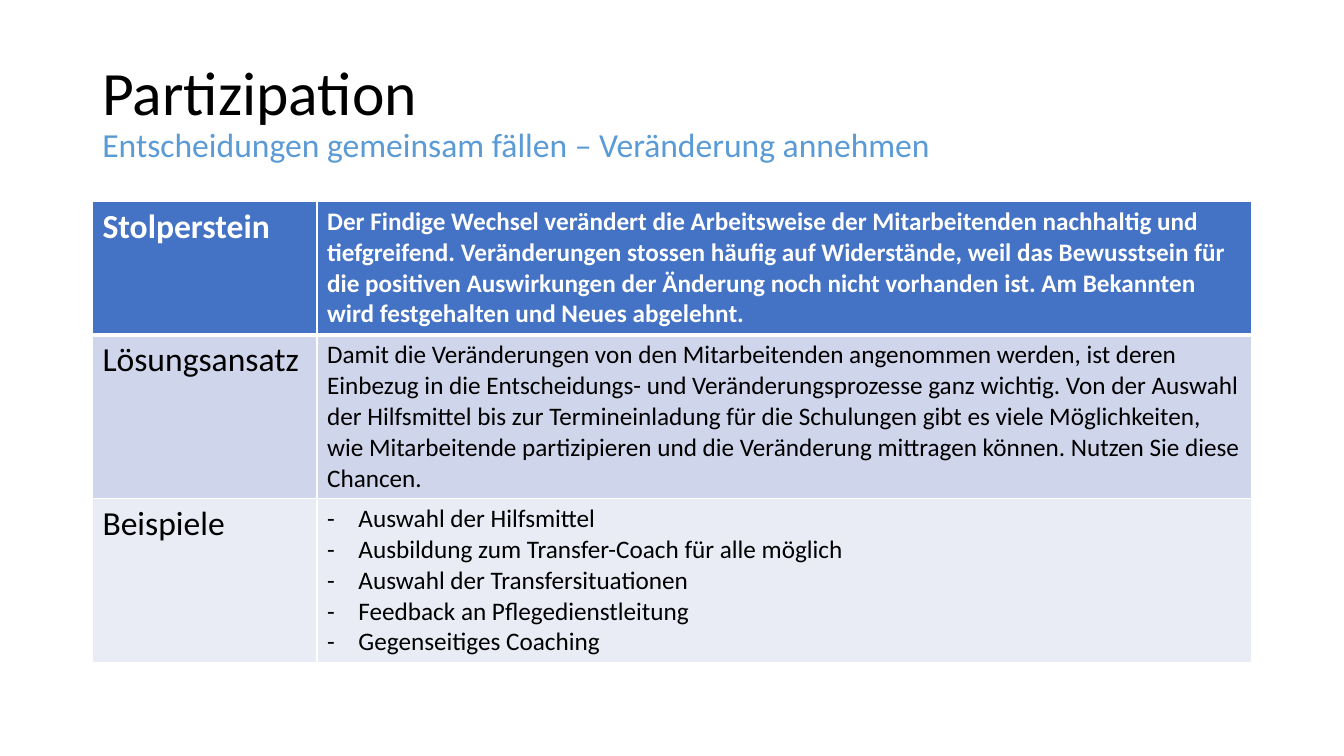
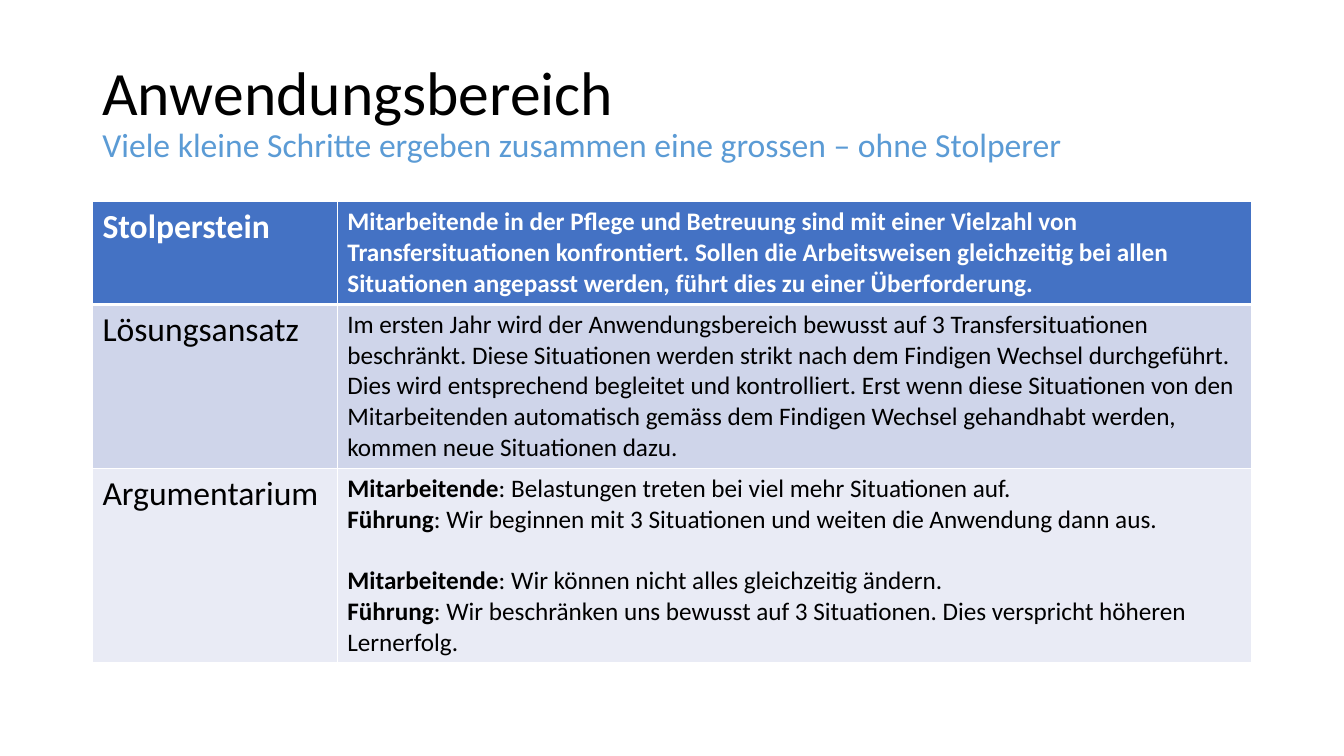
import dataclasses

import lxml.etree
import pptx
import pptx.dml.color
import pptx.enum.text
import pptx.oxml.ns
import pptx.util

Cm, Pt = pptx.util.Cm, pptx.util.Pt


@dataclasses.dataclass(frozen=True)
class Theme:
    font: str = "Calibri"
    text: str = "000000"
    subtitle: str = "5B9BD5"
    header_text: str = "FFFFFF"
    border: str = "FFFFFF"
    row_fills: tuple = ("4472C4", "CFD5EA", "E9EBF5")
    title_size: int = 44
    label_size: int = 24
    body_size: int = 18
    thin_border: int = 1
    header_border: int = 3


THEME = Theme()

# Content: each row has a label, its number of text lines and its paragraphs.
# A paragraph is plain text, a Bullet or a Statement by a speaker.


@dataclasses.dataclass(frozen=True)
class Bullet:
    text: str


@dataclasses.dataclass(frozen=True)
class Statement:
    speaker: str
    text: str
    new_exchange: bool = False


TOPICS = [
    {
        "title": "Partizipation",
        "subtitle": "Entscheidungen gemeinsam fällen – Veränderung annehmen",
        "label_width": 5.66,
        "rows": [
            ("Stolperstein", 4, [
                "Der Findige Wechsel verändert die Arbeitsweise der Mitarbeitenden "
                "nachhaltig und tiefgreifend. Veränderungen stossen häufig auf "
                "Widerstände, weil das Bewusstsein für die positiven Auswirkungen der "
                "Änderung noch nicht vorhanden ist. Am Bekannten wird festgehalten und "
                "Neues abgelehnt."]),
            ("Lösungsansatz", 5, [
                "Damit die Veränderungen von den Mitarbeitenden angenommen werden, ist "
                "deren Einbezug in die Entscheidungs- und Veränderungsprozesse ganz "
                "wichtig. Von der Auswahl der Hilfsmittel bis zur Termineinladung für "
                "die Schulungen gibt es viele Möglichkeiten, wie Mitarbeitende "
                "partizipieren und die Veränderung mittragen können. Nutzen Sie diese "
                "Chancen."]),
            ("Beispiele", 5, [
                Bullet("Auswahl der Hilfsmittel"),
                Bullet("Ausbildung zum Transfer-Coach für alle möglich"),
                Bullet("Auswahl der Transfersituationen"),
                Bullet("Feedback an Pflegedienstleitung"),
                Bullet("Gegenseitiges Coaching")]),
        ],
    },
    {
        "title": "Anwendungsbereich",
        "subtitle": "Viele kleine Schritte ergeben zusammen eine grossen – ohne Stolperer",
        "label_width": 6.17,
        "rows": [
            ("Stolperstein", 3, [
                "Mitarbeitende in der Pflege und Betreuung sind mit einer Vielzahl von "
                "Transfersituationen konfrontiert. Sollen die Arbeitsweisen "
                "gleichzeitig bei allen Situationen angepasst werden, führt dies zu "
                "einer Überforderung."]),
            ("Lösungsansatz", 5, [
                "Im ersten Jahr wird der Anwendungsbereich bewusst auf 3 "
                "Transfersituationen beschränkt. Diese Situationen werden strikt nach "
                "dem Findigen Wechsel durchgeführt. Dies wird entsprechend begleitet "
                "und kontrolliert. Erst wenn diese Situationen von den Mitarbeitenden "
                "automatisch gemäss dem Findigen Wechsel gehandhabt werden, kommen "
                "neue Situationen dazu."]),
            ("Argumentarium", 6, [
                Statement("Mitarbeitende",
                          ": Belastungen treten bei viel mehr Situationen auf."),
                Statement("Führung",
                          ": Wir beginnen mit 3 Situationen und weiten die Anwendung "
                          "dann aus."),
                Statement("Mitarbeitende",
                          ": Wir können nicht alles gleichzeitig ändern.",
                          new_exchange=True),
                Statement("Führung",
                          ": Wir beschränken uns bewusst auf 3 Situationen. Dies "
                          "verspricht höheren Lernerfolg.")]),
        ],
    },
]

# Layout in centimetres
SLIDE_WIDTH, SLIDE_HEIGHT = 33.87, 19.05
LEFT, WIDTH = 2.33, 29.21
TITLE_TOP, TITLE_HEIGHT = 1.02, 3.68
TABLE_TOP = 5.08
LINE_HEIGHT, CELL_PADDING = 0.77, 0.28
BULLET_INDENT = 0.79
EXCHANGE_GAP = 22  # points, one body line


def rgb(color):
    return pptx.dml.color.RGBColor.from_string(color)


def add_run(paragraph, text, size, color, bold=False):
    run = paragraph.add_run()
    run.text = text
    run.font.name = THEME.font
    run.font.size = Pt(size)
    run.font.bold = bold
    run.font.color.rgb = rgb(color)


def sub_element(parent, tag, **attributes):
    return lxml.etree.SubElement(parent, pptx.oxml.ns.qn(tag), attributes)


def set_dash(paragraph):
    properties = paragraph._p.get_or_add_pPr()
    properties.set("marL", str(Cm(BULLET_INDENT)))
    properties.set("indent", str(-Cm(BULLET_INDENT)))
    sub_element(properties, "a:buFont", typeface=THEME.font)
    sub_element(properties, "a:buChar", char="-")


def style_cell(cell, row):
    widths = {side: THEME.thin_border for side in "LRTB"}
    if row == 0:
        widths["B"] = THEME.header_border
    elif row == 1:
        widths["T"] = THEME.header_border
    properties = cell._tc.get_or_add_tcPr()
    for side, width in widths.items():
        line = sub_element(properties, f"a:ln{side}", w=str(Pt(width)))
        sub_element(sub_element(line, "a:solidFill"), "a:srgbClr", val=THEME.border)
    cell.fill.solid()
    cell.fill.fore_color.rgb = rgb(THEME.row_fills[row])


def add_title(slide, title, subtitle):
    heading = slide.shapes.add_textbox(
        Cm(LEFT), Cm(TITLE_TOP), Cm(WIDTH), Cm(TITLE_HEIGHT))
    frame = heading.text_frame
    frame.word_wrap = True
    frame.vertical_anchor = pptx.enum.text.MSO_ANCHOR.MIDDLE
    paragraph = frame.paragraphs[0]
    paragraph.line_spacing = 0.9
    add_run(paragraph, title, THEME.title_size, THEME.text)
    paragraph.add_line_break()
    add_run(paragraph, subtitle, THEME.label_size, THEME.subtitle)


def fill_body(frame, items, color, bold):
    for index, item in enumerate(items):
        paragraph = frame.add_paragraph() if index else frame.paragraphs[0]
        if isinstance(item, Statement):
            if item.new_exchange:
                paragraph.space_before = Pt(EXCHANGE_GAP)
            add_run(paragraph, item.speaker, THEME.body_size, color, bold=True)
            add_run(paragraph, item.text, THEME.body_size, color)
        elif isinstance(item, Bullet):
            set_dash(paragraph)
            add_run(paragraph, item.text, THEME.body_size, color)
        else:
            add_run(paragraph, item, THEME.body_size, color, bold)


def add_topic_table(slide, rows, label_width):
    heights = [lines * LINE_HEIGHT + CELL_PADDING for _, lines, _ in rows]
    table = slide.shapes.add_table(
        len(rows), 2, Cm(LEFT), Cm(TABLE_TOP), Cm(WIDTH), Cm(sum(heights))).table
    table.first_row = table.horz_banding = False
    table.columns[0].width = Cm(label_width)
    table.columns[1].width = Cm(WIDTH - label_width)
    for row, (label, _, items) in enumerate(rows):
        is_header = row == 0
        color = THEME.header_text if is_header else THEME.text
        table.rows[row].height = Cm(heights[row])
        label_cell, body_cell = table.cell(row, 0), table.cell(row, 1)
        for cell in (label_cell, body_cell):
            style_cell(cell, row)
        add_run(label_cell.text_frame.paragraphs[0], label,
                THEME.label_size, color, is_header)
        fill_body(body_cell.text_frame, items, color, is_header)


def main():
    presentation = pptx.Presentation()
    presentation.slide_width = Cm(SLIDE_WIDTH)
    presentation.slide_height = Cm(SLIDE_HEIGHT)
    blank = presentation.slide_layouts[6]
    for topic in TOPICS:
        slide = presentation.slides.add_slide(blank)
        add_title(slide, topic["title"], topic["subtitle"])
        add_topic_table(slide, topic["rows"], topic["label_width"])
    presentation.save("out.pptx")


if __name__ == "__main__":
    main()
